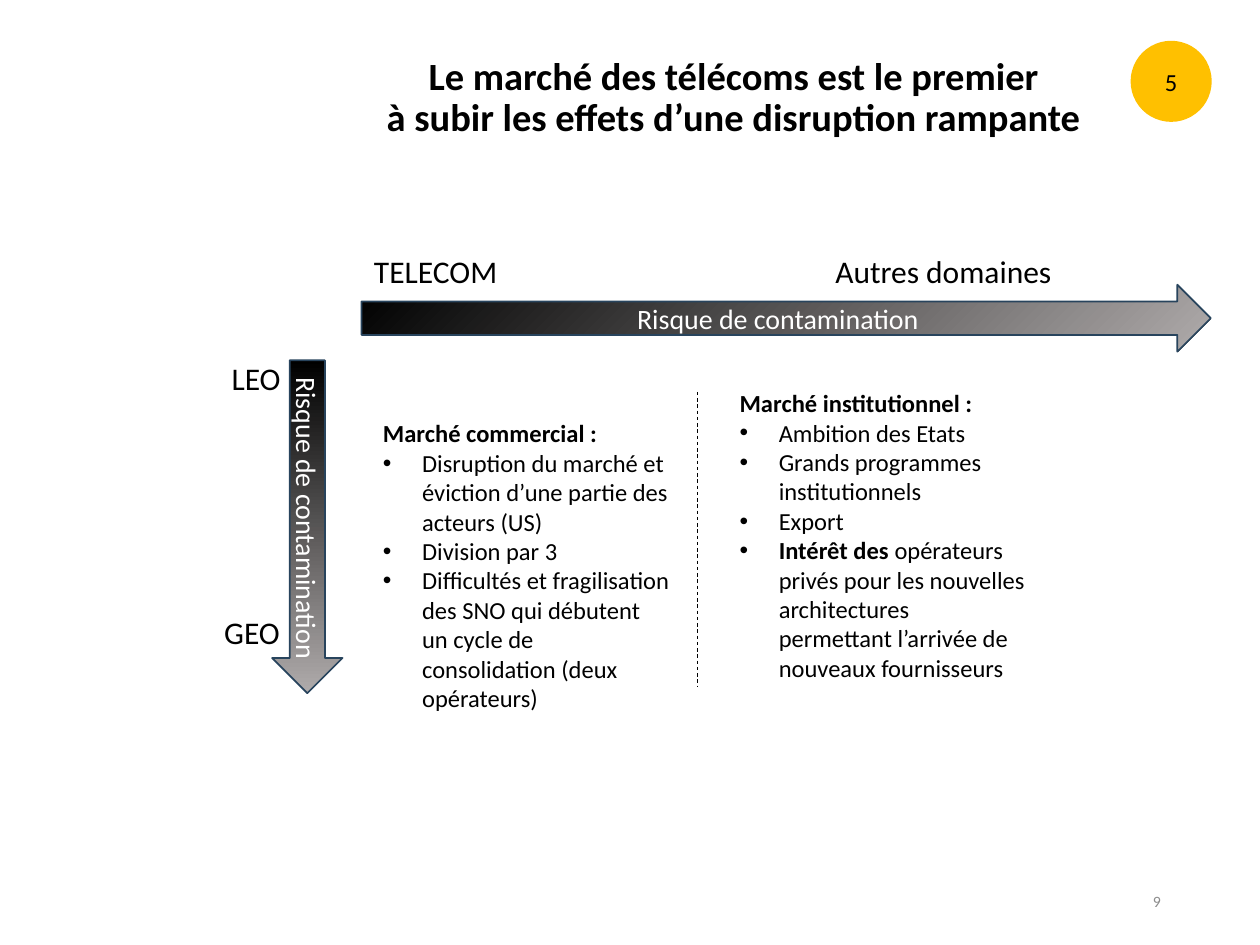
from lxml.etree import SubElement
from pptx import Presentation
from pptx.dml.color import RGBColor
from pptx.enum.dml import MSO_LINE
from pptx.enum.shapes import MSO_CONNECTOR, MSO_SHAPE
from pptx.enum.text import MSO_ANCHOR, PP_ALIGN
from pptx.oxml.ns import qn
from pptx.util import Cm, Pt

COLORS = {
    "black": "000000",
    "white": "FFFFFF",
    "grey": "AFABAB",
    "outline": "28445D",
    "badge": "FFC000",
    "number": "8C8C8C",
}
FONT = "Calibri"


def color(name):
    return RGBColor.from_string(COLORS[name])


def add_span(para, text, size, name="black", bold=False):
    span = para.add_run()
    span.text = text
    span.font.name = FONT
    span.font.size = Pt(size)
    span.font.bold = bold
    span.font.color.rgb = color(name)


deck = Presentation()
deck.slide_width, deck.slide_height = Cm(25.4), Cm(19.05)
page = deck.slides.add_slide(deck.slide_layouts[5])

# Title
title = page.shapes.title
title.left, title.top, title.width, title.height = Cm(5.31), Cm(0.15), Cm(19.13), Cm(3.68)
title.text_frame.vertical_anchor = MSO_ANCHOR.MIDDLE
para = title.text_frame.paragraphs[0]
para.alignment = PP_ALIGN.CENTER
para.line_spacing = 0.9
add_span(para, "Le marché des télécoms est le premier ", 22, bold=True)
para.add_line_break()
add_span(para, "à subir les effets d’une disruption rampante ", 22, bold=True)

# Contamination arrows: left, top, width, height, rotation, gradient angle
arrows = [
    (7.29, 5.74, 17.12, 1.35, 0, 315),
    (2.84, 9.91, 6.71, 1.42, 90, 0),
]
for left, top, width, height, rotation, angle in arrows:
    arrow = page.shapes.add_shape(
        MSO_SHAPE.RIGHT_ARROW, Cm(left), Cm(top), Cm(width), Cm(height))
    arrow.rotation = rotation
    arrow.shadow.inherit = False
    arrow.fill.gradient()
    arrow.fill.gradient_angle = angle
    for stop, name in zip(arrow.fill.gradient_stops, ("black", "grey")):
        stop.color.rgb = color(name)
    arrow.line.color.rgb = color("outline")
    arrow.line.width = Pt(1)
    arrow.text_frame.vertical_anchor = MSO_ANCHOR.MIDDLE
    para = arrow.text_frame.paragraphs[0]
    para.alignment = PP_ALIGN.CENTER
    add_span(para, "Risque de contamination", 16, "white")

# Axis labels
labels = [
    ("LEO", 4.42, 7.11, 1.85),
    ("GEO", 4.27, 12.24, 1.85),
    ("TELECOM", 7.29, 4.95, 3.07),
    ("Autres domaines", 16.59, 4.95, 5.87),
]
for text, left, top, width in labels:
    box = page.shapes.add_textbox(Cm(left), Cm(top), Cm(width), Cm(1.02))
    box.text_frame.word_wrap = True
    add_span(box.text_frame.paragraphs[0], text, 18)

# Market columns: each bullet is a list of (text, bold) spans
markets = [
    ("Marché commercial :", 7.47, 8.31, 6.83, [
        [("Disruption du marché et éviction d’une partie des acteurs (US)", False)],
        [("Division par 3", False)],
        [("Difficultés et fragilisation des SNO qui débutent un cycle de "
          "consolidation (deux opérateurs)", False)],
    ]),
    ("Marché institutionnel :", 14.66, 7.7, 6.25, [
        [("Ambition des Etats", False)],
        [("Grands programmes institutionnels", False)],
        [("Export", False)],
        [("Intérêt des ", True),
         ("opérateurs privés pour les nouvelles architectures permettant "
          "l’arrivée de nouveaux fournisseurs", False)],
    ]),
]
for heading, left, top, height, bullets in markets:
    box = page.shapes.add_textbox(Cm(left), Cm(top), Cm(6.32), Cm(height))
    frame = box.text_frame
    frame.word_wrap = True
    add_span(frame.paragraphs[0], heading, 14, bold=True)
    for spans in bullets:
        para = frame.add_paragraph()
        properties = para._p.get_or_add_pPr()
        properties.set("marL", str(Cm(0.79)))
        properties.set("indent", str(-Cm(0.79)))
        SubElement(properties, qn("a:buFont"), typeface="Arial")
        SubElement(properties, qn("a:buChar"), char="•")
        for text, bold in spans:
            add_span(para, text, 14, bold=bold)

# Dashed divider between the columns
divider = page.shapes.add_connector(
    MSO_CONNECTOR.STRAIGHT, Cm(14.05), Cm(7.9), Cm(14.05), Cm(13.84))
divider.line.color.rgb = color("black")
divider.line.width = Pt(0.5)
divider.line.dash_style = MSO_LINE.DASH
SubElement(divider._element.spPr, qn("a:effectLst"))

# Numbered badge
badge = page.shapes.add_shape(
    MSO_SHAPE.FLOWCHART_CONNECTOR, Cm(22.81), Cm(0.84), Cm(1.6), Cm(1.6))
badge.shadow.inherit = False
badge.fill.solid()
badge.fill.fore_color.rgb = color("badge")
badge.line.color.rgb = color("badge")
badge.line.width = Pt(1)
badge.text_frame.vertical_anchor = MSO_ANCHOR.MIDDLE
para = badge.text_frame.paragraphs[0]
para.alignment = PP_ALIGN.CENTER
add_span(para, "5", 14)

# Page number
box = page.shapes.add_textbox(Cm(17.93), Cm(17.65), Cm(5.72), Cm(1.02))
box.text_frame.word_wrap = True
box.text_frame.vertical_anchor = MSO_ANCHOR.MIDDLE
para = box.text_frame.paragraphs[0]
para.alignment = PP_ALIGN.RIGHT
add_span(para, "9", 9, "number")

deck.save("out.pptx")
